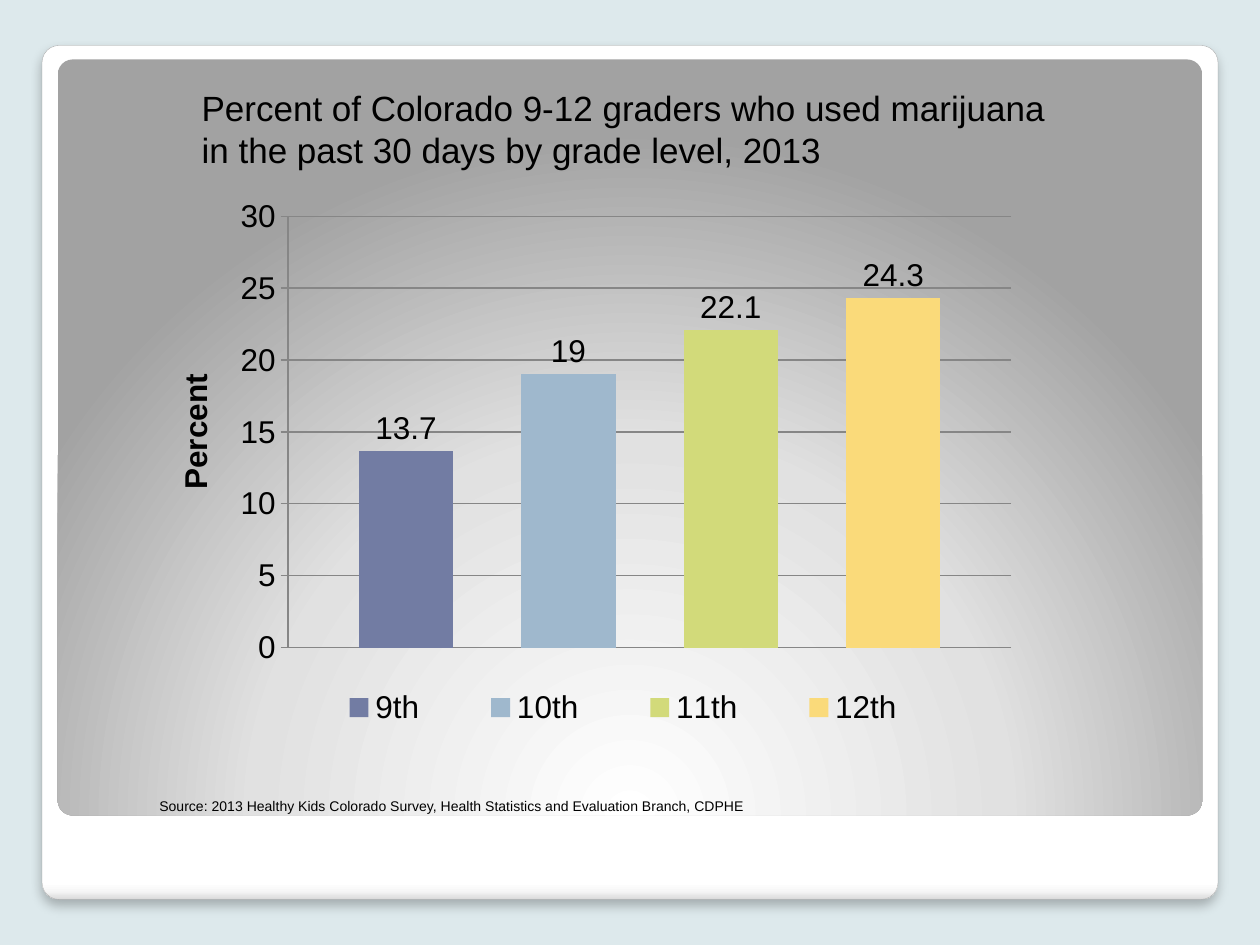
from lxml import etree
from pptx import Presentation
from pptx.chart.data import CategoryChartData
from pptx.enum import chart as charts, shapes, text
from pptx.dml.color import RGBColor
from pptx.oxml import parse_xml
from pptx.oxml.ns import nsdecls, qn
from pptx.util import Pt

COLORS = {
    "background": "DDE9EC", "text": "000000", "grid": "868686", "border": "A4A4A4",
    "9th": "727CA3", "10th": "9FB8CD", "11th": "D2DA7A", "12th": "FADA7A",
}
PERCENTS = {"9th": 13.7, "10th": 19, "11th": 22.1, "12th": 24.3}
FRAME_STOPS = [(0, "FFFFFF"), (98, "FFFFFF"), (99, "F7F7F7"), (100, "DADADA")]
PANEL_STOPS = [(0, "FFFFFF"), (55, "E1E1E1"), (100, "A2A2A2")]
DOWNWARD = '<a:lin ang="5400000" scaled="0"/>'
FROM_BOTTOM = ('<a:path path="circle"><a:fillToRect l="50000" t="175000" '
               'r="50000" b="-75000"/></a:path>')


def rgb(name):
    return RGBColor.from_string(COLORS[name])


def place(parent, index, x, y, w, h, inner=False):
    """Fix a chart part at fractions of the chart's size."""
    for old in parent.findall(qn("c:layout")):
        parent.remove(old)
    layout = etree.Element(qn("c:layout"))
    manual = etree.SubElement(layout, qn("c:manualLayout"))
    settings = [("layoutTarget", "inner")] if inner else []
    settings += [("xMode", "edge"), ("yMode", "edge"), ("x", x), ("y", y), ("w", w), ("h", h)]
    for tag, value in settings:
        etree.SubElement(manual, qn("c:" + tag)).set("val", str(value))
    parent.insert(index, layout)


class SlideBuilder:
    font_name = "Arial"

    def __init__(self, slide):
        self.slide = slide
        slide.background.fill.solid()
        slide.background.fill.fore_color.rgb = rgb("background")

    def style(self, font, size, bold=False):
        font.name, font.size, font.bold = self.font_name, Pt(size), bold
        font.color.rgb = rgb("text")

    def panel(self, left, top, width, height, stops, direction):
        panel = self.slide.shapes.add_shape(
            shapes.MSO_SHAPE.ROUNDED_RECTANGLE, Pt(left), Pt(top), Pt(width), Pt(height))
        panel.adjustments[0] = 0.02
        panel.shadow.inherit = False
        panel.line.fill.background()
        panel.fill.gradient()
        properties = panel.element.spPr
        marks = "".join(f'<a:gs pos="{pos * 1000}"><a:srgbClr val="{color}"/></a:gs>'
                        for pos, color in stops)
        gradient = parse_xml(f'<a:gradFill {nsdecls("a")} rotWithShape="1">'
                             f'<a:gsLst>{marks}</a:gsLst>{direction}</a:gradFill>')
        properties.replace(properties.find(qn("a:gradFill")), gradient)
        return panel

    def raise_panel(self, panel):
        """Give a panel a thin border and a soft shadow below it."""
        panel.line.color.rgb = rgb("border")
        panel.line.width = Pt(0.16)
        effects = panel.element.spPr.find(qn("a:effectLst"))
        effects.append(parse_xml(
            f'<a:outerShdw {nsdecls("a")} blurRad="{Pt(6)}" dist="{Pt(4)}" dir="5400000" '
            'algn="tl" rotWithShape="0"><a:srgbClr val="000000"><a:alpha val="25000"/>'
            '</a:srgbClr></a:outerShdw>'))

    def fill_text(self, box, words, size):
        frame = box.text_frame
        frame.text = words
        frame.word_wrap = True
        frame.auto_size = text.MSO_AUTO_SIZE.NONE
        frame.vertical_anchor = text.MSO_ANCHOR.TOP
        paragraph = frame.paragraphs[0]
        paragraph.alignment = text.PP_ALIGN.LEFT
        self.style(paragraph.font, size)

    def title(self, left, top, width, height, words, size):
        title = self.slide.shapes.title
        title.left, title.top, title.width, title.height = map(Pt, (left, top, width, height))
        self.fill_text(title, words, size)
        title.element.getparent().append(title.element)  # in front of the panels

    def note(self, left, top, width, height, words, size):
        note = self.slide.shapes.add_textbox(Pt(left), Pt(top), Pt(width), Pt(height))
        self.fill_text(note, words, size)

    def column_chart(self, left, top, width, height, values, axis_name, size):
        data = CategoryChartData()
        data.categories = ["1"]
        for grade, value in values.items():
            data.add_series(grade, [value])
        chart = self.slide.shapes.add_chart(
            charts.XL_CHART_TYPE.COLUMN_CLUSTERED,
            Pt(left), Pt(top), Pt(width), Pt(height), data).chart
        chart.has_title = False
        self.style(chart.font, size)

        columns = chart.plots[0]
        columns.vary_by_categories = False
        columns.gap_width, columns.overlap = 150, -72
        for series in columns.series:
            series.format.fill.solid()
            series.format.fill.fore_color.rgb = rgb(series.name)
            labels = series.data_labels
            labels.show_value = True
            labels.position = charts.XL_LABEL_POSITION.OUTSIDE_END
            self.style(labels.font, size)

        chart.category_axis.visible = False
        axis = chart.value_axis
        axis.minimum_scale, axis.maximum_scale, axis.major_unit = 0, 30, 5
        axis.major_tick_mark = charts.XL_TICK_MARK.CROSS
        for line in (axis.format.line, axis.major_gridlines.format.line):
            line.color.rgb = rgb("grid")
            line.width = Pt(0.75)
        axis.axis_title.text_frame.text = axis_name
        self.style(axis.axis_title.text_frame.paragraphs[0].font, size, bold=True)

        chart.has_legend = True
        legend = chart.legend
        legend.position = charts.XL_LEGEND_POSITION.BOTTOM
        legend.include_in_layout = False
        self.style(legend.font, size)
        plot_area = chart.element.find(".//" + qn("c:plotArea"))
        place(plot_area, 0, 0.16, 0.05, 0.82, 0.79, inner=True)
        place(chart.element.find(".//" + qn("c:legend")), 1, 0.16, 0.9, 0.76, 0.1)


def main():
    deck = Presentation()
    deck.slide_width, deck.slide_height = Pt(720), Pt(540)
    builder = SlideBuilder(deck.slides.add_slide(deck.slide_layouts[5]))
    frame = builder.panel(24, 26, 672, 488, FRAME_STOPS, DOWNWARD)
    builder.raise_panel(frame)
    builder.panel(33, 34, 654, 432, PANEL_STOPS, FROM_BOTTOM)
    builder.note(84, 452, 534, 46, "Source: 2013 Healthy Kids Colorado Survey, "
                 "Health Statistics and Evaluation Branch, CDPHE", 8)
    builder.column_chart(84, 108, 504, 312, PERCENTS, "Percent", 18)
    builder.title(108, 46, 498, 56, "Percent of Colorado 9-12 graders who used marijuana "
                  "in the past 30 days by grade level, 2013", 20)
    deck.save("out.pptx")


if __name__ == "__main__":
    main()
